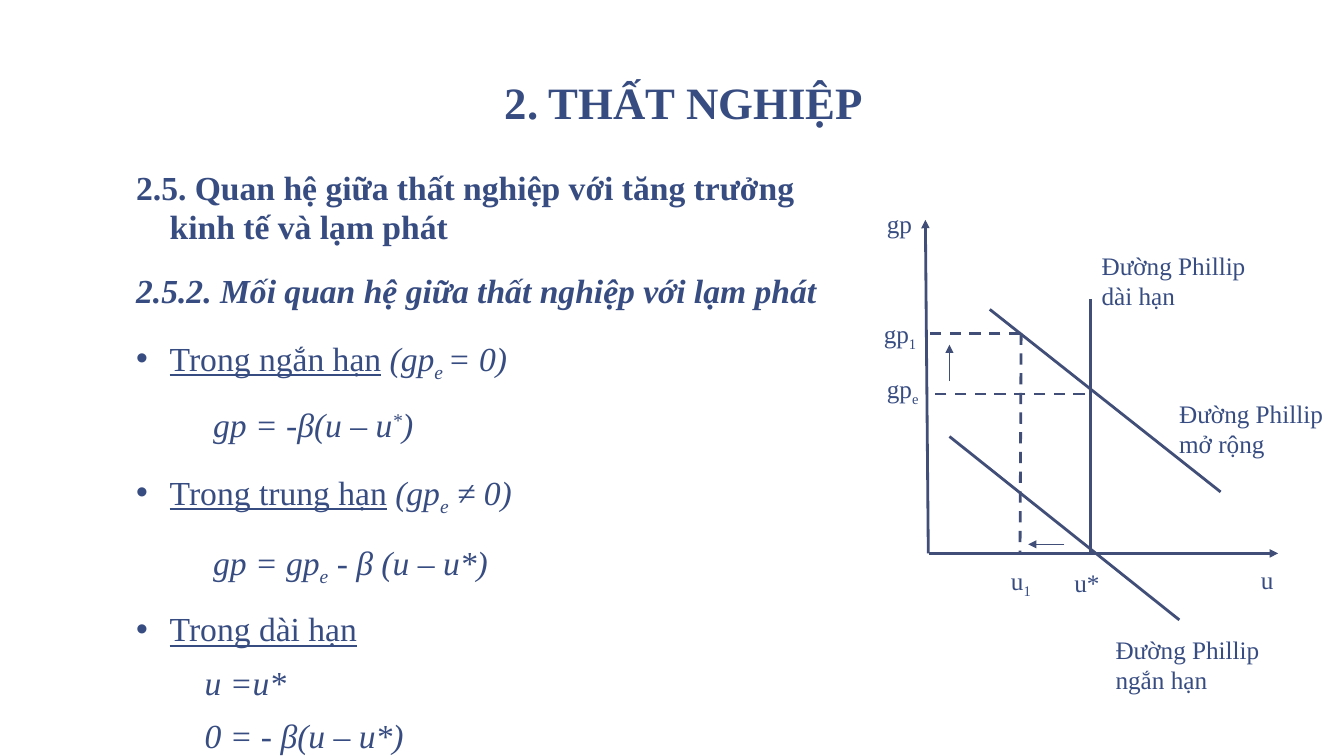
from lxml import etree
from pptx import Presentation
from pptx.dml.color import RGBColor
from pptx.enum.dml import MSO_LINE
from pptx.enum.shapes import MSO_CONNECTOR
from pptx.enum.text import MSO_ANCHOR, PP_ALIGN
from pptx.oxml.ns import qn
from pptx.util import Pt

STRAIGHT = MSO_CONNECTOR.STRAIGHT
DASH = MSO_LINE.DASH
TOP, BOTTOM = MSO_ANCHOR.TOP, MSO_ANCHOR.BOTTOM
CENTER = PP_ALIGN.CENTER

FONT, INK, LINE = "Times New Roman", "374C81", "414E77"

# Content: runs are (text, style); b, i, u = bold, italic, underline; _ ^ = sub, super
TITLE = "2. THẤT NGHIỆP"
BODY = [
    ("head", [("2.5. Quan hệ giữa thất nghiệp với tăng trưởng kinh tế và lạm phát", "b")]),
    ("head", [("2.5.2. Mối quan hệ giữa thất nghiệp với lạm phát", "bi")]),
    ("point", [("Trong ngắn hạn", "u"), (" ", ""), ("(gp", "i"), ("e ", "i_"), ("= 0)", "i")]),
    ("math", [("gp = -β(u – u", "i"), ("*", "i^"), (")", "i")]),
    ("point", [("Trong trung hạn", "u"), (" ", ""), ("(gp", "i"), ("e", "i_"), (" ≠ 0)", "i")]),
    ("math", [("gp = gp", "i"), ("e", "i_"), (" - β (u – u*)", "i")]),
    ("point", [("Trong dài hạn", "u")]),
    ("sub", [("u =u*", "i")]),
    ("sub", [("0 = - β(u – u*)", "i")]),
]
# Paragraph kinds: left margin, first-line indent, space before
KINDS = {"head": (24, -24, 18.7), "point": (24, -24, 18.7),
         "math": (55, 0, 18.7), "sub": (49, 0, 10.7)}

# Chart labels: left, top, runs
MARKS = [
    (626.4, 145.4, [("gp", "")]),
    (624.2, 223.9, [("gp", ""), ("1", "_")]),
    (626.4, 262.8, [("gp", ""), ("e", "_")]),
    (893.5, 399.6, [("u", "")]),
    (760.3, 401.8, [("u*", "")]),
    (715, 400.3, [("u", ""), ("1", "_")]),
]
NAMES = [
    (779.8, 175, [("Đường Phillip dài hạn", "")]),
    (835.2, 280.8, [("Đường Phillip mở rộng", "")]),
    (789.8, 449.3, [("Đường Phillip ngắn hạn", "")]),
]

# Chart lines: x1, y1, x2, y2
BASE = 395.3
AXES = [(663.1, BASE, 661, 157), (663.8, BASE, 913, BASE)]
CURVES = [(779, 213.8, 779, BASE), (707, 221, 871.9, 351.4), (678.2, 311.8, 842.4, 442.8)]
GUIDES = [(774.7, 281.5, 663.8, 281.5), (729.4, 238.3, 728.6, BASE),
          (728.6, 238.3, 661, 238.3)]
SHIFTS = [(678.2, 272.2, 678.2, 246.2), (760.3, 388.8, 734.4, 388.8)]
# Each group: lines, width, dashed, arrowhead
GROUPS = [(AXES, 2, False, True), (CURVES, 2, False, False),
          (GUIDES, 2, True, False), (SHIFTS, 0.5, False, True)]


def color(code):
    return RGBColor.from_string(code)


def put(item, form):
    for name, value in form.items():
        setattr(item, name, value)


def add_runs(para, runs, size):
    for text, style in runs:
        run = para.add_run()
        run.text = text
        put(run.font, {"name": FONT, "size": Pt(size), "bold": "b" in style,
                       "italic": "i" in style, "underline": "u" in style})
        run.font.color.rgb = color(INK)
        shift = -25000 if "_" in style else 30000 if "^" in style else 0
        if shift:
            run.font._element.set("baseline", str(shift))


def set_frame(frame, side, edge, anchor):
    put(frame, {"word_wrap": True, "vertical_anchor": anchor,
                "margin_left": Pt(side), "margin_right": Pt(side),
                "margin_top": Pt(edge), "margin_bottom": Pt(edge)})


def add_box(slide, place, side=7.2, edge=3.6):
    box = slide.shapes.add_textbox(*map(Pt, place))
    set_frame(box.text_frame, side, edge, TOP)
    return box.text_frame


def add_line(slide, ends, width, dashed, arrow):
    link = slide.shapes.add_connector(STRAIGHT, *map(Pt, ends))
    link.line.width = Pt(width)
    link.line.color.rgb = color(LINE)
    if dashed:
        link.line.dash_style = DASH
    if arrow:
        etree.SubElement(link.line._get_or_add_ln(), qn("a:tailEnd"), type="triangle")
    etree.SubElement(link._element.spPr, qn("a:effectLst"))


def main():
    deck = Presentation()
    deck.slide_width, deck.slide_height = Pt(960), Pt(540)
    slide = deck.slides.add_slide(deck.slide_layouts[5])

    # Title
    title = slide.shapes.title
    put(title, {"left": Pt(88.6), "top": Pt(2.9), "width": Pt(800), "height": Pt(93.6)})
    set_frame(title.text_frame, 9.4, 5, BOTTOM)
    para = title.text_frame.paragraphs[0]
    put(para, {"alignment": CENTER, "line_spacing": Pt(39)})
    add_runs(para, [(TITLE, "b")], 32)

    # Outline on the left
    frame = add_box(slide, (87.8, 116.6, 522, 369.4), 9.4, 5)
    for i, (kind, runs) in enumerate(BODY):
        para = frame.add_paragraph() if i else frame.paragraphs[0]
        left, first, space = KINDS[kind]
        props = para._p.get_or_add_pPr()
        props.set("marL", str(Pt(left)))
        props.set("indent", str(Pt(first)))
        if kind == "point":
            etree.SubElement(props, qn("a:buFont"), typeface="Arial")
            etree.SubElement(props, qn("a:buChar"), char="•")
        put(para, {"line_spacing": 0.95, "space_before": Pt(space if i else 0)})
        add_runs(para, runs, 24)

    # Phillips curve diagram
    for lines, *look in GROUPS:
        for ends in lines:
            add_line(slide, ends, *look)
    for labels, width, height in ((MARKS, 39.6, 28.8), (NAMES, 136, 51)):
        for left, top, runs in labels:
            frame = add_box(slide, (left, top, width, height))
            add_runs(frame.paragraphs[0], runs, 18)

    deck.save("out.pptx")


if __name__ == "__main__":
    main()
